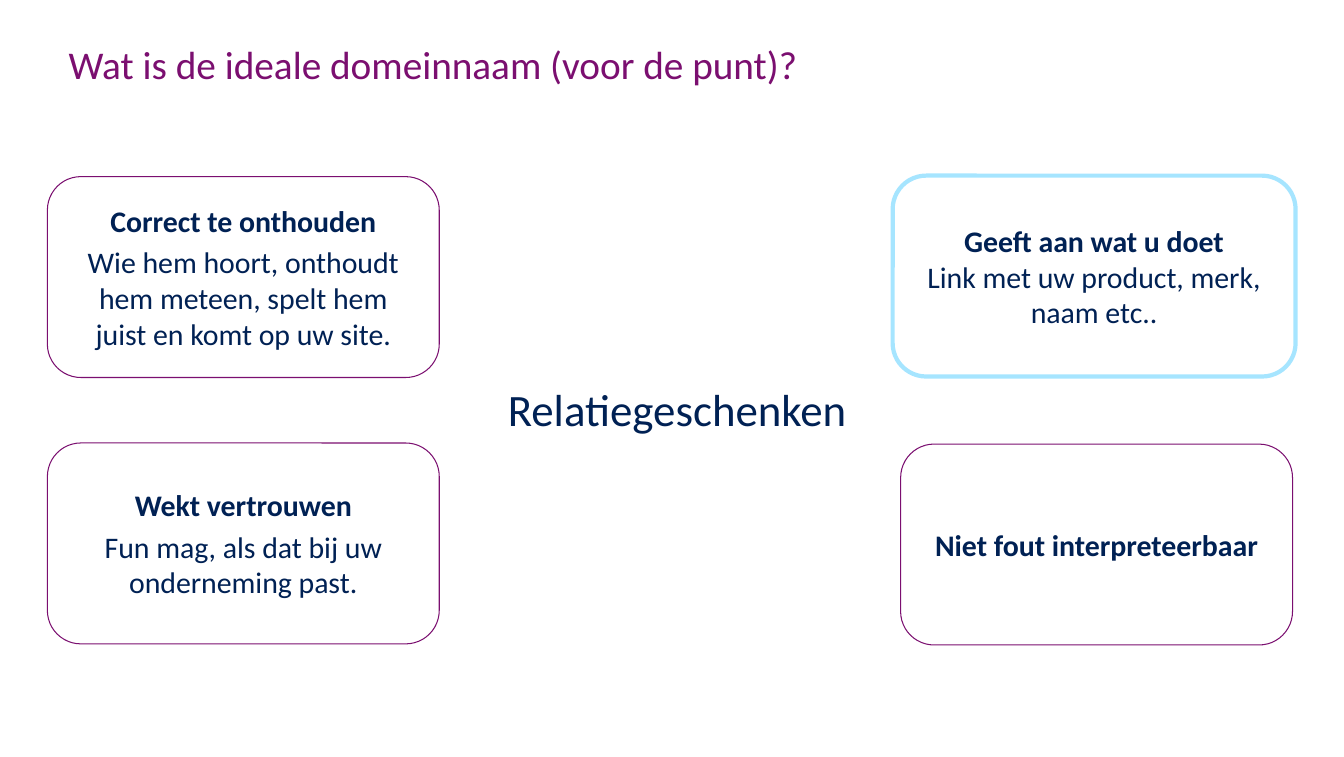
from pptx import Presentation
from pptx.dml.color import RGBColor
from pptx.enum.shapes import MSO_SHAPE as SHAPE
from pptx.enum.text import MSO_ANCHOR as ANCHOR, MSO_AUTO_SIZE as AUTO, PP_ALIGN as ALIGN
from pptx.util import Pt

PURPLE = RGBColor(0x7B, 0x0F, 0x70)
NAVY = RGBColor(0x00, 0x21, 0x54)
SKY = RGBColor(0xA6, 0xE5, 0xFF)
WHITE = RGBColor(0xFF, 0xFF, 0xFF)


def add_run(p, text, size=21.3, color=NAVY, bold=False, font="Calibri"):
    r = p.add_run()
    r.text = text
    r.font.name, r.font.size, r.font.bold = font, Pt(size), bold
    r.font.color.rgb = color


def set_frame(tf, margins, anchor=ANCHOR.MIDDLE, wrap=True, auto_size=AUTO.NONE):
    """Set the frame's layout; margins are left, top, right, bottom in points."""
    tf.margin_left, tf.margin_top, tf.margin_right, tf.margin_bottom = map(Pt, margins)
    tf.vertical_anchor, tf.word_wrap, tf.auto_size = anchor, wrap, auto_size


class Deck:
    box_width, box_height = 279.4, 143.3
    box_margins = (9.6, 4.8, 9.6, 4.8)

    def __init__(self, width, height):
        self.prs = Presentation()
        self.prs.slide_width, self.prs.slide_height = Pt(width), Pt(height)
        self.s = self.prs.slides.add_slide(self.prs.slide_layouts[5])

    def title(self, text, x, y, w, h):
        sp = self.s.shapes.title
        sp.left, sp.top, sp.width, sp.height = map(Pt, (x, y, w, h))
        set_frame(sp.text_frame, (14.4, 0, 8.6, 0))
        p = sp.text_frame.paragraphs[0]
        p.alignment, p.line_spacing = ALIGN.LEFT, Pt(24)
        p.space_before, p.space_after = Pt(0), Pt(1)
        add_run(p, text, size=28, color=PURPLE)

    def box(self, x, y, heading, body="", w=box_width, line=PURPLE, weight=0.75, same_paragraph=False):
        """Draw a rounded box; same_paragraph puts the body after a line break."""
        sp = self.s.shapes.add_shape(SHAPE.ROUNDED_RECTANGLE, Pt(x), Pt(y), Pt(w), Pt(self.box_height))
        sp.shadow.inherit = False
        sp.fill.solid()
        sp.fill.fore_color.rgb = WHITE
        sp.line.color.rgb, sp.line.width = line, Pt(weight)
        tf = sp.text_frame
        set_frame(tf, self.box_margins)
        p = tf.paragraphs[0]
        p.alignment = ALIGN.CENTER
        add_run(p, heading, bold=True)
        if not body:
            return
        if same_paragraph:
            p.add_line_break()
        else:
            p = tf.add_paragraph()
            p.alignment, p.space_before = ALIGN.CENTER, Pt(4)
        add_run(p, body)

    def label(self, text, x, y, w, h):
        sp = self.s.shapes.add_textbox(Pt(x), Pt(y), Pt(w), Pt(h))
        set_frame(sp.text_frame, (7.2, 3.6, 7.2, 3.6), ANCHOR.TOP, False, AUTO.SHAPE_TO_FIT_TEXT)
        add_run(sp.text_frame.paragraphs[0], text, size=32)


def main():
    deck = Deck(958.3, 540)
    deck.title("Wat is de ideale domeinnaam (voor de punt)?", 34.6, 23.8, 898.6, 52.6)
    deck.box(33.8, 126, "Correct te onthouden",
             "Wie hem hoort, onthoudt hem meteen, spelt hem juist en komt op uw site.")
    deck.box(33.8, 316, "Wekt vertrouwen", "Fun mag, als dat bij uw onderneming past.")
    deck.box(636.5, 125.3, "Geeft aan wat u doet", "Link met uw product, merk, naam etc..",
             w=287.3, line=SKY, weight=3, same_paragraph=True)
    deck.box(642.2, 316.8, "Niet fout interpreteerbaar")
    deck.label("Relatiegeschenken", 355, 268.6, 258.5, 46)
    deck.prs.save("out.pptx")


if __name__ == "__main__":
    main()
